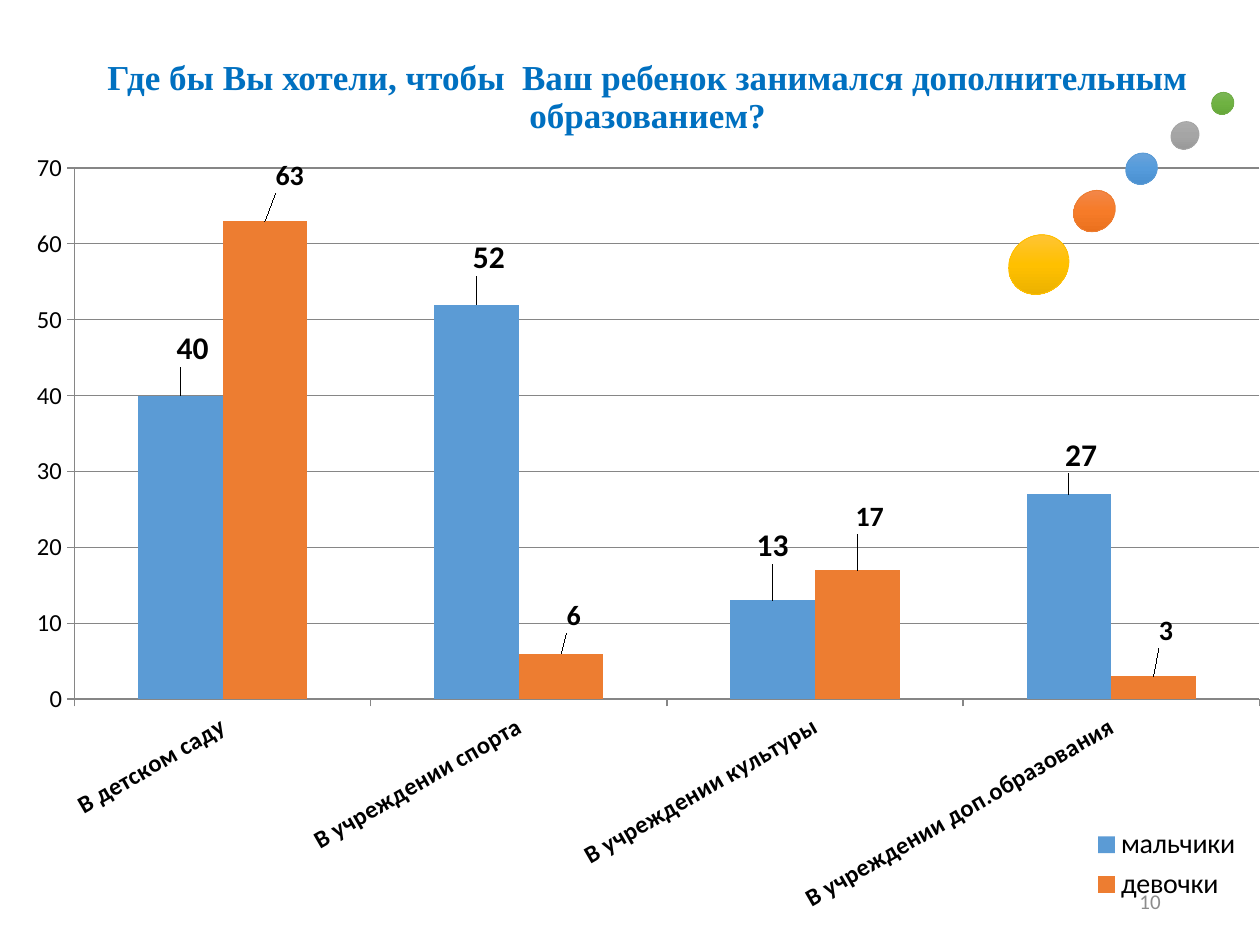
from lxml.etree import SubElement
from pptx import Presentation
from pptx.chart.data import CategoryChartData
from pptx.dml.color import RGBColor
from pptx.enum.chart import XL_CHART_TYPE as CHART, XL_LABEL_POSITION as LABEL
from pptx.enum.chart import XL_LEGEND_POSITION as LEGEND, XL_TICK_MARK as TICK
from pptx.enum.shapes import MSO_SHAPE as SHAPE
from pptx.enum.text import MSO_ANCHOR as ANCHOR, PP_ALIGN as ALIGN
from pptx.oxml import parse_xml
from pptx.oxml.ns import nsdecls, qn
from pptx.util import Pt

BLACK = RGBColor(0x00, 0x00, 0x00)
GRAY = RGBColor(0x8C, 0x8C, 0x8C)
GRID = RGBColor(0x86, 0x86, 0x86)
TITLE_BLUE = RGBColor(0x00, 0x70, 0xC0)
BLUE = RGBColor(0x5B, 0x9B, 0xD5)
ORANGE = RGBColor(0xED, 0x7D, 0x31)
GOLD = RGBColor(0xFF, 0xC0, 0x00)
SILVER = RGBColor(0xA5, 0xA5, 0xA5)
GREEN = RGBColor(0x70, 0xAD, 0x47)

CATEGORIES = ["В детском саду", "В учреждении спорта",
              "В учреждении культуры", "В учреждении доп.образования"]
# name, values, colour, label size, label shifts as fractions of the chart
SERIES = [
    ("мальчики", (40, 52, 13, 27), BLUE, 18,
     [(0.01, -0.03), (0.01, -0.03), (0, -0.04), (0.01, -0.02)]),
    ("девочки", (63, 6, 17, 3), ORANGE, 16,
     [(0.02, -0.03), (0.01, -0.02), (0.01, -0.04), (0.01, -0.03)]),
]
# left, top, width, height, line colour, gradient stops
BALLS = [
    (577.4, 133.2, 32.4, 36, GOLD, ("FFC64B", "FFC000", "E3AB00")),
    (614.2, 108, 22.3, 25.2, ORANGE, ("F18C57", "F67B28", "E56C19")),
    (643.7, 87.1, 17.3, 18.7, BLUE, ("71A6DB", "559BDB", "448ACA")),
    (669.6, 69.1, 15.1, 16.6, SILVER, ("AFAFAF", "A5A5A5", "939393")),
    (692.6, 52.6, 12.2, 13, GREEN, ("81B861", "6FB242", "62A336")),
]


def set_format(target, values):
    for name, value in values.items():
        setattr(target, name, value)


def set_font(font, color=BLACK, **values):
    set_format(font, values)
    font.color.rgb = color


def make_layout(x, y, w=None, h=None, inner=False):
    """Return a c:layout; without w and h it is a shift from the default place."""
    layout = parse_xml(f"<c:layout {nsdecls('c')}><c:manualLayout/></c:layout>")
    values = [("x", x), ("y", y)]
    if w is not None:
        values = [("xMode", "edge"), ("yMode", "edge"), *values, ("w", w), ("h", h)]
    if inner:
        values.insert(0, ("layoutTarget", "inner"))
    for tag, value in values:
        SubElement(layout[0], qn(f"c:{tag}")).set("val", str(value))
    return layout


def replace_layout(parent, layout, before):
    """Put the layout in front of the first child with the tag `before`."""
    for old in parent.findall(qn("c:layout")):
        parent.remove(old)
    parent.find(qn(before)).addprevious(layout)


class Page:
    def __init__(self, slide, font="Calibri", title_font="Times New Roman"):
        self.slide = slide
        self.font = font
        self.title_font = title_font

    def title(self, text, x, y, w, h):
        sp = self.slide.shapes.title
        set_format(sp, dict(left=Pt(x), top=Pt(y), width=Pt(w), height=Pt(h)))
        self.fill_text(sp.text_frame, text, ALIGN.CENTER, TITLE_BLUE,
                       name=self.title_font, size=Pt(20), bold=True)
        sp.text_frame.paragraphs[0].line_spacing = 0.9

    def text(self, text, x, y, w, h):
        sp = self.slide.shapes.add_textbox(Pt(x), Pt(y), Pt(w), Pt(h))
        self.fill_text(sp.text_frame, text, ALIGN.RIGHT, GRAY,
                       name=self.font, size=Pt(12))

    def fill_text(self, tf, text, align, color, **font):
        set_format(tf, dict(word_wrap=True, vertical_anchor=ANCHOR.MIDDLE))
        p = tf.paragraphs[0]
        p.alignment = align
        r = p.add_run()
        r.text = text
        set_font(r.font, color, **font)

    def chart(self, x, y, w, h):
        data = CategoryChartData()
        data.categories = CATEGORIES
        for name, values, *_ in SERIES:
            data.add_series(name, values)
        chart = self.slide.shapes.add_chart(
            CHART.COLUMN_CLUSTERED, Pt(x), Pt(y), Pt(w), Pt(h), data).chart
        set_format(chart, dict(has_title=False, has_legend=True))
        set_font(chart.font, name=self.font, size=Pt(10))
        plot = chart.plots[0]
        set_format(plot, dict(gap_width=150, overlap=0, vary_by_categories=False))
        area = plot._element.getparent()
        replace_layout(area, make_layout(0.04, 0.03, 0.96, 0.69, inner=True), "c:barChart")
        self.axes(chart)
        self.legend(chart.legend)
        for series, (_, _, color, size, shifts) in zip(plot.series, SERIES):
            self.bars(series, color, size, shifts)

    def axes(self, chart):
        for axis, bold in ((chart.category_axis, True), (chart.value_axis, False)):
            set_format(axis, dict(major_tick_mark=TICK.OUTSIDE, minor_tick_mark=TICK.NONE))
            set_font(axis.tick_labels.font, name=self.font, size=Pt(14), bold=bold)
            axis.format.line.color.rgb = GRID
        body = chart.category_axis._element.find(qn("c:txPr")).find(qn("a:bodyPr"))
        body.set("rot", str(-30 * 60000))
        body.set("vert", "horz")
        set_format(chart.value_axis, dict(minimum_scale=0, maximum_scale=70, major_unit=10))
        chart.value_axis.major_gridlines.format.line.color.rgb = GRID

    def legend(self, legend):
        set_format(legend, dict(position=LEGEND.RIGHT, include_in_layout=False))
        set_font(legend.font, name=self.font, size=Pt(16))
        replace_layout(legend._element, make_layout(0.86, 0.88, 0.13, 0.11), "c:overlay")

    def bars(self, series, color, size, shifts):
        series.format.fill.solid()
        series.format.fill.fore_color.rgb = color
        font = dict(name=self.font, size=Pt(size), bold=True)
        labels = series.data_labels
        set_format(labels, dict(show_value=True, position=LABEL.OUTSIDE_END))
        set_font(labels.font, **font)
        for i, shift in enumerate(shifts):
            label = series.points[i].data_label
            set_font(label.font, **font)
            label.position = LABEL.OUTSIDE_END
            item = labels._element.findall(qn("c:dLbl"))[i]
            item.find(qn("c:idx")).addnext(make_layout(*shift))

    def balls(self, balls):
        group = self.slide.shapes.add_group_shape()
        for x, y, w, h, color, stops in balls:
            sp = group.shapes.add_shape(
                SHAPE.FLOWCHART_CONNECTOR, Pt(x), Pt(y), Pt(w), Pt(h))
            sp.rotation = 48.2
            sp.shadow.inherit = False
            sp.line.width = Pt(0.5)
            sp.line.color.rgb = color
            self.gradient(sp, stops)

    def gradient(self, sp, stops):
        """Fill from top to bottom, upright whatever the shape's rotation."""
        marks = "".join(f'<a:gs pos="{i * 50000}"><a:srgbClr val="{c}"/></a:gs>'
                        for i, c in enumerate(stops))
        fill = parse_xml(f'<a:gradFill {nsdecls("a")} rotWithShape="0"><a:gsLst>{marks}'
                         '</a:gsLst><a:lin ang="5400000" scaled="0"/></a:gradFill>')
        sp._element.spPr.find(qn("a:prstGeom")).addnext(fill)


def main():
    prs = Presentation()
    set_format(prs, dict(slide_width=Pt(720), slide_height=Pt(540)))
    page = Page(prs.slides.add_slide(prs.slide_layouts[5]))
    page.text("10", 508.3, 500.4, 162, 28.8)
    page.title("Где бы Вы хотели, чтобы  Ваш ребенок занимался "
               "дополнительным образованием?", 49.7, 28.8, 640.8, 54.7)
    page.chart(14.4, 82.8, 705.6, 439.9)
    page.balls(BALLS)
    prs.save("out.pptx")


if __name__ == "__main__":
    main()
